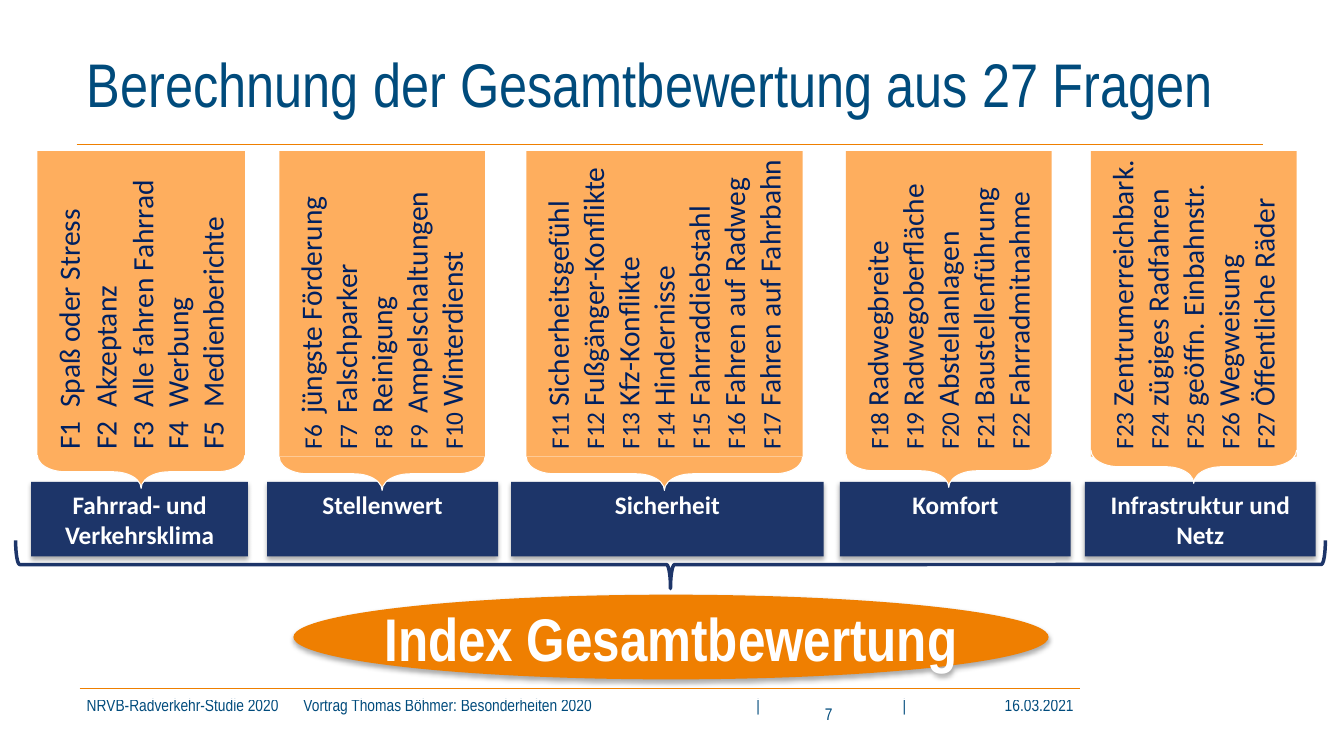
"""Build the slide on how 27 questions form the overall rating index."""
from lxml.etree import SubElement
from pptx import Presentation
from pptx.dml.color import RGBColor
from pptx.enum.shapes import MSO_CONNECTOR, MSO_SHAPE
from pptx.enum.text import MSO_ANCHOR, MSO_AUTO_SIZE, PP_ALIGN
from pptx.oxml.ns import qn
from pptx.util import Inches, Pt

WIDTH, HEIGHT = 13.33, 7.5
COLORS = {"title": "004B7C", "rule": "EE7F00", "card": "FEAE5E", "question": "002060",
          "header": "1D3569", "index": "EF7F01", "white": "FFFFFF", "shadow": "000000"}
TITLE = "Berechnung der Gesamtbewertung aus 27 Fragen"
INDEX = "Index Gesamtbewertung"
PAGE_NUMBER = "7"
FOOTER = ["NRVB-Radverkehr-Studie 2020\tVortrag Thomas Böhmer: Besonderheiten 2020",
          "|", "", "|", "16.03.2021"]
FOOTER_WIDTHS = [6.37, 0.58, 0.87, 0.58, 1.39]
FOOTER_ALIGN = [PP_ALIGN.LEFT] + [PP_ALIGN.CENTER] * 3 + [PP_ALIGN.RIGHT]
RULES = [(0.76, 12.53, 1.43), (0.79, 10.71, 6.83)]
GROUPS = [
    {"name": "Fahrrad- und Verkehrsklima", "card": (0.37, 2.06), "header": (0.31, 2.15),
     "brace": 4.68, "label_size": 21, "spacing": [(None, 6), (0.8, 6), (0.8, None)],
     "questions": ["Spaß oder Stress", "Akzeptanz", "Alle fahren Fahrrad", "Werbung",
                   "Medienberichte"]},
    {"name": "Stellenwert", "card": (2.77, 2.04), "header": (2.65, 2.29), "brace": 4.7,
     "questions": ["jüngste Förderung", "Falschparker", "Reinigung", "Ampelschaltungen",
                   "Winterdienst"]},
    {"name": "Sicherheit", "card": (5.22, 2.74), "header": (5.07, 3.1), "brace": 4.7,
     "questions": ["Sicherheitsgefühl", "Fußgänger-Konflikte", "Kfz-Konflikte", "Hindernisse",
                   "Fahrraddiebstahl", "Fahren auf Radweg", "Fahren auf Fahrbahn"]},
    {"name": "Komfort", "card": (8.39, 2.04), "header": (8.33, 2.29), "brace": 4.67,
     "questions": ["Radwegbreite", "Radwegoberfläche", "Abstellanlagen", "Baustellenführung",
                   "Fahrradmitnahme"]},
    {"name": "Infrastruktur und Netz", "card": (10.82, 2.04), "header": (10.76, 2.29),
     "brace": 4.63,
     "questions": ["Zentrumerreichbark.", "zügiges Radfahren", "geöffn. Einbahnstr.",
                   "Wegweisung", "Öffentliche Räder"]},
]
CARD_TOP, CARD_HEIGHT = 1.5, 3.03
HEADER_TOP, HEADER_HEIGHT = 4.78, 0.74
QUESTION_SIZE, LABEL_SIZE = 21, 18
TAB_PER_POINT = 0.0197


def color(name):
    return RGBColor.from_string(COLORS[name])


def write(frame, lines, font="Calibri", ink="white", bold=False, align=PP_ALIGN.LEFT,
          insets=(0, 0), anchor=MSO_ANCHOR.TOP, wrap=True, spacing=(), tab=None):
    """Fill a text frame; each line is a list of (text, size) spans."""
    frame.word_wrap = wrap
    frame.auto_size = MSO_AUTO_SIZE.NONE
    frame.vertical_anchor = anchor
    frame.margin_left = frame.margin_right = Inches(insets[0])
    frame.margin_top = frame.margin_bottom = Inches(insets[1])
    for position, spans in enumerate(lines):
        para = frame.paragraphs[0] if position == 0 else frame.add_paragraph()
        para.alignment = align
        if tab:
            stops = SubElement(para._p.get_or_add_pPr(), qn("a:tabLst"))
            SubElement(stops, qn("a:tab"), pos=str(Inches(tab)), algn="l")
        if position < len(spacing):
            line_spacing, after = spacing[position]
            para.line_spacing = line_spacing
            para.space_after = Pt(after) if after else None
        for text, size in spans:
            span = para.add_run()
            span.text = text
            span.font.name, span.font.size, span.font.bold = font, Pt(size), bold
            span.font.color.rgb = color(ink)


def add_block(page, kind, left, top, width, height, fill=None, line=None, shadow=False):
    block = page.shapes.add_shape(kind, *map(Inches, (left, top, width, height)))
    block.shadow.inherit = False
    if fill:
        block.fill.solid()
        block.fill.fore_color.rgb = color(fill)
    else:
        block.fill.background()
    if line:
        block.line.color.rgb = color(line[0])
        block.line.width = Pt(line[1])
    else:
        block.line.fill.background()
    if shadow:
        effects = block._element.spPr.find(qn("a:effectLst"))
        outer = SubElement(effects, qn("a:outerShdw"), blurRad=str(Pt(3.5)),
                           dist=str(Pt(2.2)), dir="5400000", rotWithShape="0")
        tint = SubElement(outer, qn("a:srgbClr"), val=COLORS["shadow"])
        SubElement(tint, qn("a:alpha"), val="32000")
    return block


def add_brace(page, center_x, center_y, length, depth, **style):
    brace = add_block(page, MSO_SHAPE.LEFT_BRACE, center_x - depth / 2,
                      center_y - length / 2, depth, length, **style)
    brace.rotation = 270
    return brace


def add_footer(page):
    for start, end, y in RULES:
        rule = page.shapes.add_connector(MSO_CONNECTOR.STRAIGHT, *map(Inches, (start, y, end, y)))
        rule.line.color.rgb = color("rule")
        rule.line.width = Pt(0.5)
        SubElement(rule._element.spPr, qn("a:effectLst"))
    table = page.shapes.add_table(2, len(FOOTER), *map(
        Inches, (0.86, 6.94, sum(FOOTER_WIDTHS), 0.36))).table
    table.first_row = table.horz_banding = False
    for column, width in enumerate(FOOTER_WIDTHS):
        table.columns[column].width = Inches(width)
        for row, text in enumerate((FOOTER[column], "")):
            cell = table.cell(row, column)
            cell.fill.background()
            cell.margin_left = cell.margin_right = cell.margin_top = cell.margin_bottom = 0
            write_cell(cell, text, FOOTER_ALIGN[column])
    number = page.shapes.add_textbox(*map(Inches, (7.73, 6.98, 0.98, 0.21)))
    write(number.text_frame, [[(PAGE_NUMBER, 12)]], font="Arial Narrow", ink="title",
          align=PP_ALIGN.CENTER, wrap=False)


def write_cell(cell, text, align):
    write(cell.text_frame, [[(text, 12)]], font="Arial Narrow", ink="title", align=align,
          tab=2.15 if "\t" in text else None)


def add_group(page, group, first_number):
    header = add_block(page, MSO_SHAPE.RECTANGLE, group["header"][0], HEADER_TOP,
                       group["header"][1], HEADER_HEIGHT, fill="header", shadow=True)
    write(header.text_frame, [[(group["name"], 18)]], bold=True, align=PP_ALIGN.CENTER,
          insets=(0.13, 0.07))
    left, width = group["card"]
    card = add_block(page, MSO_SHAPE.RECTANGLE, left, CARD_TOP, width, CARD_HEIGHT, fill="card")
    label_size = group.get("label_size", LABEL_SIZE)
    lines = [[(f"F{number}" + ("\t" if number < 10 else " "), label_size),
              (question, QUESTION_SIZE)]
             for number, question in enumerate(group["questions"], first_number)]
    write(card.text_frame, lines, ink="question", insets=(0.13, 0.07),
          spacing=group.get("spacing", ()),
          tab=label_size * TAB_PER_POINT if first_number < 10 else None)
    card.text_frame._txBody.bodyPr.set("vert", "vert270")
    brace = add_brace(page, left + width / 2, group["brace"], width, 0.33,
                      fill="card", line=("white", 0.75))
    brace.adjustments[0] = 0.843


def main():
    deck = Presentation()
    deck.slide_width, deck.slide_height = Inches(WIDTH), Inches(HEIGHT)
    page = deck.slides.add_slide(deck.slide_layouts[5])
    title = page.shapes.title
    title.left, title.top, title.width, title.height = map(Inches, (0.76, 0.48, 12, 0.77))
    write(title.text_frame, [[(TITLE, 44)]], font="Arial Narrow", ink="title",
          insets=(0.1, 0.05), anchor=MSO_ANCHOR.MIDDLE, spacing=[(0.9, None)])
    add_footer(page)
    first_number = 1
    for group in GROUPS:
        add_group(page, group, first_number)
        first_number += len(group["questions"])
    add_brace(page, 6.65, 5.6, 12.99, 0.48, line=("header", 2.5))
    index = add_block(page, MSO_SHAPE.OVAL, 2.91, 5.9, 7.49, 0.84, fill="index", shadow=True)
    write(index.text_frame, [[(INDEX, 43)]], font="Arial Narrow", bold=True,
          align=PP_ALIGN.CENTER, insets=(0.13, 0.13), anchor=MSO_ANCHOR.MIDDLE, wrap=False)
    deck.save("out.pptx")


if __name__ == "__main__":
    main()
